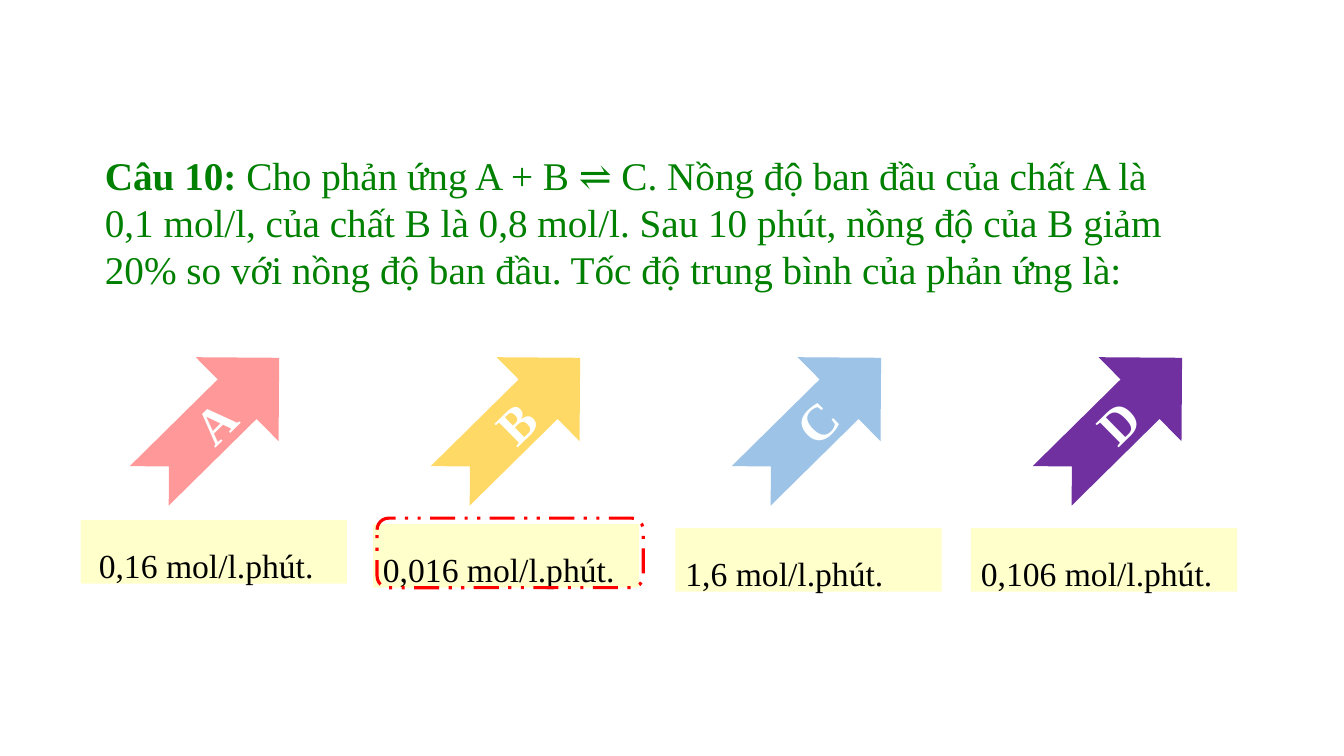
"""Build a multiple-choice chemistry slide with four lettered arrows and answers."""
from pptx import Presentation
from pptx.dml.color import RGBColor
from pptx.enum.dml import MSO_LINE
from pptx.enum.shapes import MSO_SHAPE
from pptx.enum.text import MSO_ANCHOR, MSO_AUTO_SIZE, PP_ALIGN
from pptx.util import Inches, Pt

COLORS = {
    "question": "008000",
    "letter": "FEFFFF",
    "answer": "000000",
    "answer_fill": "FFFFCC",
    "correct": "FF0000",
    "A": "FF9999",
    "B": "FFD966",
    "C": "9DC3E6",
    "D": "7030A0",
}
COL = ROW = Inches(0.1)


def write(shape, *runs, size, color, align=PP_ALIGN.LEFT, anchor=MSO_ANCHOR.TOP,
          spacing=None, left=Inches(0.1)):
    """Fill a shape with one paragraph made of (text, bold) runs."""
    frame = shape.text_frame
    frame.word_wrap = True
    frame.auto_size = MSO_AUTO_SIZE.NONE
    frame.vertical_anchor = anchor
    frame.margin_left = left
    paragraph = frame.paragraphs[0]
    paragraph.alignment = align
    paragraph.line_spacing = spacing
    for text, bold in runs:
        run = paragraph.add_run()
        run.text = text
        run.font.name = "Times New Roman"
        run.font.size = Pt(size)
        run.font.bold = bold
        run.font.color.rgb = RGBColor.from_string(COLORS[color])


def add_block(kind, left, top, width, height, fill=None):
    """Add an unlined preset shape placed in grid columns and rows."""
    block = slide.shapes.add_shape(
        kind, int(left * COL), int(top * ROW), int(width * COL), int(height * ROW))
    block.shadow.inherit = False
    block.line.fill.background()
    if fill:
        block.fill.solid()
        block.fill.fore_color.rgb = RGBColor.from_string(COLORS[fill])
    else:
        block.fill.background()
    return block


presentation = Presentation()
presentation.slide_width = Inches(13.33)
presentation.slide_height = Inches(7.5)
slide = presentation.slides.add_slide(presentation.slide_layouts[5])

question = slide.shapes.title
question.left, question.top = int(9.4 * COL), int(14.5 * ROW)
question.width, question.height = int(108.1 * COL), int(15.1 * ROW)
write(question,
      ("Câu 10:", True),
      (" Cho phản ứng A + B ⇌ C. Nồng độ ban đầu của chất A là 0,1 mol/l, "
       "của chất B là 0,8 mol/l. Sau 10 phút, nồng độ của B giảm 20% so với "
       "nồng độ ban đầu. Tốc độ trung bình của phản ứng là:", False),
      size=28, color="question")

choices = [
    ("A", "0,16 mol/l.phút.", 8, 51.6, 0.18),
    ("B", "0,016 mol/l.phút.", 37, 52, 0.1),
    ("C", "1,6 mol/l.phút.", 67, 52.4, 0.1),
    ("D", "0,106 mol/l.phút.", 96.3, 52.4, 0.1),
]
for index, (letter, value, left, top, inset) in enumerate(choices):
    arrow = add_block(MSO_SHAPE.NOTCHED_RIGHT_ARROW,
                      12.2 + 29.85 * index, 36, 18.1, 11.7, fill=letter)
    arrow.adjustments[0] = 0.47
    arrow.adjustments[1] = 0.5
    arrow.rotation = 315.4
    write(arrow, (letter, True), size=36, color="letter",
          align=PP_ALIGN.CENTER, anchor=MSO_ANCHOR.MIDDLE)

    answer = add_block(MSO_SHAPE.RECTANGLE, left, top, 26.4, 6.3, fill="answer_fill")
    write(answer, (value, False), size=24, color="answer", spacing=1.5,
          left=Inches(inset))

correct_frame = add_block(MSO_SHAPE.ROUNDED_RECTANGLE, 37.4, 51.4, 26.4, 6.9)
correct_frame.line.color.rgb = RGBColor.from_string(COLORS["correct"])
correct_frame.line.width = Pt(2.25)
correct_frame.line.dash_style = MSO_LINE.DASH_DOT_DOT

presentation.save("out.pptx")
